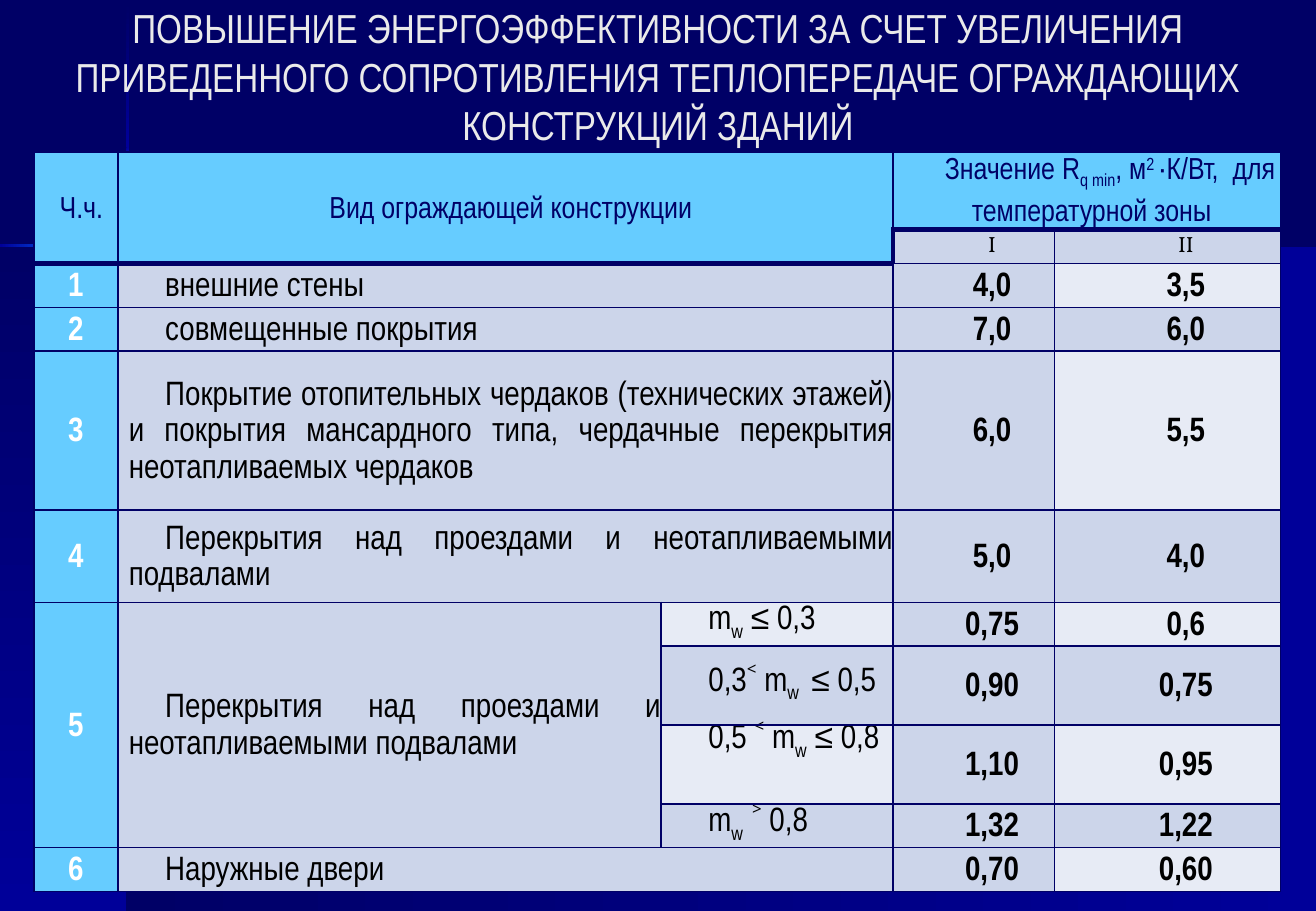
import copy

import pptx
import pptx.dml.color
import pptx.enum.shapes
import pptx.enum.text
import pptx.oxml
import pptx.oxml.ns
import pptx.util

Inches, Pt = pptx.util.Inches, pptx.util.Pt
ALIGN, ANCHOR = pptx.enum.text.PP_ALIGN, pptx.enum.text.MSO_ANCHOR

COLORS = {
    "navy": "000066", "blue": "000099", "bright": "0066FF", "glow": "FFFFCC",
    "title": "EAEAEA", "header": "66CCFF", "body": "CCD5EA", "light": "E7EBF5",
    "black": "000000", "white": "FFFFFF",
}

# Background panels and glowing lines: box, gradient colours, clockwise angle
BACKDROP = [
    ((1.05, 2.02, 9.78, 5.48), ("navy", "blue"), 0),
    ((0, 2.02, 1.05, 5.48), ("navy", "blue"), 90),
    ((1.04, 0.01, 0.02, 1.2), ("navy", "blue"), 90),
    ((1.04, 2.82, 0.02, 4.68), ("blue", "navy"), 90),
    ((1.92, 2.01, 8.91, 0.02), ("blue", "navy"), 0),
    ((1.04, 2.38, 0.02, 0.44), ("bright", "blue"), 90),
    ((1.04, 1.21, 0.02, 0.44), ("blue", "bright"), 90),
    ((1.04, 1.65, 0.02, 0.73), ("bright", "glow", "bright"), 90),
    ((0, 2.01, 0.66, 0.02), ("blue", "bright"), 0),
    ((1.44, 2.01, 0.48, 0.02), ("bright", "blue"), 0),
    ((0.65, 2.01, 0.79, 0.02), ("bright", "glow", "bright"), 0),
]

TITLE = ("ПОВЫШЕНИЕ ЭНЕРГОЭФФЕКТИВНОСТИ ЗА СЧЕТ УВЕЛИЧЕНИЯ ПРИВЕДЕННОГО "
         "СОПРОТИВЛЕНИЯ ТЕПЛОПЕРЕДАЧЕ ОГРАЖДАЮЩИХ КОНСТРУКЦИЙ ЗДАНИЙ")

COLS = [0.69, 4.47, 1.91, 1.33, 1.86]
ROWS = [0.64, 0.28, 0.36, 0.36, 1.31, 0.76, 0.36, 0.65, 0.65, 0.36, 0.36]
MERGES = [(0, 0, 1, 0), (0, 1, 1, 2), (0, 3, 0, 4), (6, 0, 9, 0), (6, 1, 9, 1)]
MERGES += [(row, 1, row, 2) for row in (2, 3, 4, 5, 10)]

# A cell is a string, or a list of (text, baseline percent) runs
FLOORS = "Перекрытия над проездами и неотапливаемыми подвалами"
RESISTANCE = [("Значение R", 0), ("q min", -25), (", м", 0), ("2 ", 30),
              ("·К/Вт,  для температурной зоны", 0)]
CELLS = [
    ["Ч.ч.", "Вид ограждающей конструкции", None, RESISTANCE, None],
    [None, None, None, "І", "ІІ"],
    ["1", "внешние стены", None, "4,0", "3,5"],
    ["2", "совмещенные покрытия", None, "7,0", "6,0"],
    ["3", "Покрытие отопительных чердаков (технических этажей) и покрытия мансардного "
     "типа, чердачные перекрытия неотапливаемых чердаков", None, "6,0", "5,5"],
    ["4", FLOORS, None, "5,0", "4,0"],
    ["5", FLOORS, [("m", 0), ("w", -25), (" ≤ 0,3", 0)], "0,75", "0,6"],
    [None, None, [("0,3˂ m", 0), ("w ", -25), (" ≤ 0,5", 0)], "0,90", "0,75"],
    [None, None, [("0,5 ˂ m", 0), ("w", -25), (" ≤ 0,8", 0)], "1,10", "0,95"],
    [None, None, [("m", 0), ("w  ", -25), ("˃ 0,8", 0)], "1,32", "1,22"],
    ["6", "Наружные двери", None, "0,70", "0,60"],
]

# Kinds of cell text; indent is (left, first line), pitch is the line spacing
NARROW = {"name": "Arial Narrow", "size": Pt(20), "bold": True}
HEADER = {"font": {**NARROW, "size": Pt(18), "bold": False}, "color": "navy",
          "align": ALIGN.CENTER, "indent": (0, 0.09), "pitch": 20}
ZONES = {**HEADER, "indent": (0.08, 0.3), "pitch": 22}
ZONE = {"font": {"name": "Vollkorn", "size": Pt(13), "bold": False}, "color": "black",
        "align": ALIGN.CENTER, "indent": (0, 0.3), "pitch": 18}
NUMBER = {"font": NARROW, "color": "white", "align": ALIGN.CENTER, "indent": (0, 0),
          "pitch": 21.6}
VALUE = {**NUMBER, "color": "black", "indent": (0, 0.3)}
NAME = {**VALUE, "font": {**NARROW, "bold": False}, "align": ALIGN.JUSTIFY,
        "indent": (0.09, 0.3)}


def rgb(name):
    return pptx.dml.color.RGBColor.from_string(COLORS[name])


def set_all(obj, values):
    for key, value in values.items():
        setattr(obj, key, value)


def add_run(p, text, font, color, baseline=0):
    r = p.add_run()
    r.text = text
    set_all(r.font, font)
    r.font.color.rgb = rgb(color)
    if baseline:
        r.font._element.set("baseline", str(baseline * 1000))


def add_backdrop(s):
    s.background.fill.solid()
    s.background.fill.fore_color.rgb = rgb("navy")
    for box, colors, angle in BACKDROP:
        sp = s.shapes.add_shape(pptx.enum.shapes.MSO_SHAPE.RECTANGLE, *map(Inches, box))
        sp.shadow.inherit = False
        sp.line.fill.background()
        sp.fill.gradient()
        sp.fill.gradient_angle = -angle % 360
        stops = sp._element.spPr.find(".//" + pptx.oxml.ns.qn("a:gsLst"))
        if len(colors) == 3:
            stops.insert(1, copy.deepcopy(stops[0]))
        for i, (stop, color) in enumerate(zip(sp.fill.gradient_stops, colors)):
            stop.color.rgb = rgb(color)
            stop.position = i / (len(colors) - 1)


def add_title(s, box):
    tf = s.shapes.add_textbox(*map(Inches, box)).text_frame
    set_all(tf, {"word_wrap": True, "vertical_anchor": ANCHOR.MIDDLE})
    p = tf.paragraphs[0]
    p.alignment = ALIGN.CENTER
    add_run(p, TITLE, {"name": "Arial Narrow", "size": Pt(24)}, "title")


def cell_format(row, col):
    if row == 0:
        return ZONES if col >= 3 else HEADER
    if row == 1:
        return ZONE
    return NUMBER if col == 0 else NAME if col < 3 else VALUE


def cell_fill(row, col):
    if row == 0 or col == 0 or (row == 1 and col < 3):
        return "header"
    striped = col == 4 or (col == 2 and 6 <= row <= 9)
    return "light" if striped and row > 1 and row % 2 == 0 else "body"


def add_borders(cell, row, col):
    # The thick line steps along the lower edge of the header
    step = 2 if col < 3 else 1
    widths = {"L": 3 if (row, col) == (1, 3) else 1,
              "R": 3 if (row, col) == (1, 2) else 1,
              "T": 3 if row == step else 1,
              "B": 3 if row == step - 1 else 1}
    tc_pr = cell._tc.get_or_add_tcPr()
    for side, width in widths.items():
        tc_pr.append(pptx.oxml.parse_xml(
            f'<a:ln{side} {pptx.oxml.ns.nsdecls("a")} w="{Pt(width)}"><a:solidFill>'
            f'<a:srgbClr val="{COLORS["navy"]}"/></a:solidFill></a:ln{side}>'))


def fill_cell(cell, row, col):
    add_borders(cell, row, col)
    set_all(cell, {"margin_left": 0, "margin_right": 0, "margin_top": 0,
                   "margin_bottom": 0, "vertical_anchor": ANCHOR.MIDDLE})
    if (row, col) == (8, 2):
        cell.vertical_anchor = ANCHOR.TOP
    cell.fill.solid()
    cell.fill.fore_color.rgb = rgb(cell_fill(row, col))
    fmt = cell_format(row, col)
    p = cell.text_frame.paragraphs[0]
    set_all(p, {"alignment": fmt["align"], "line_spacing": Pt(fmt["pitch"])})
    content = CELLS[row][col]
    if content is None:
        return
    for key, length in zip(("marL", "indent"), fmt["indent"]):
        p._p.get_or_add_pPr().set(key, str(Inches(length)))
    for text, baseline in [(content, 0)] if isinstance(content, str) else content:
        add_run(p, text, fmt["font"], fmt["color"], baseline)


def add_resistance_table(s, box):
    table = s.shapes.add_table(len(ROWS), len(COLS), *map(Inches, box)).table
    set_all(table, {"first_row": False, "horz_banding": False})
    for column, width in zip(table.columns, COLS):
        column.width = Inches(width)
    for line, height in zip(table.rows, ROWS):
        line.height = Inches(height)
    for top, left, bottom, right in MERGES:
        table.cell(top, left).merge(table.cell(bottom, right))
    for row in range(len(ROWS)):
        for col in range(len(COLS)):
            fill_cell(table.cell(row, col), row, col)


def main():
    prs = pptx.Presentation()
    set_all(prs, {"slide_width": Inches(10.83), "slide_height": Inches(7.5)})
    s = prs.slides.add_slide(prs.slide_layouts[6])
    add_backdrop(s)
    add_title(s, (0.43, 0, 9.97, 1.25))
    add_resistance_table(s, (0.28, 1.25, sum(COLS), sum(ROWS)))
    prs.save("out.pptx")


if __name__ == "__main__":
    main()
